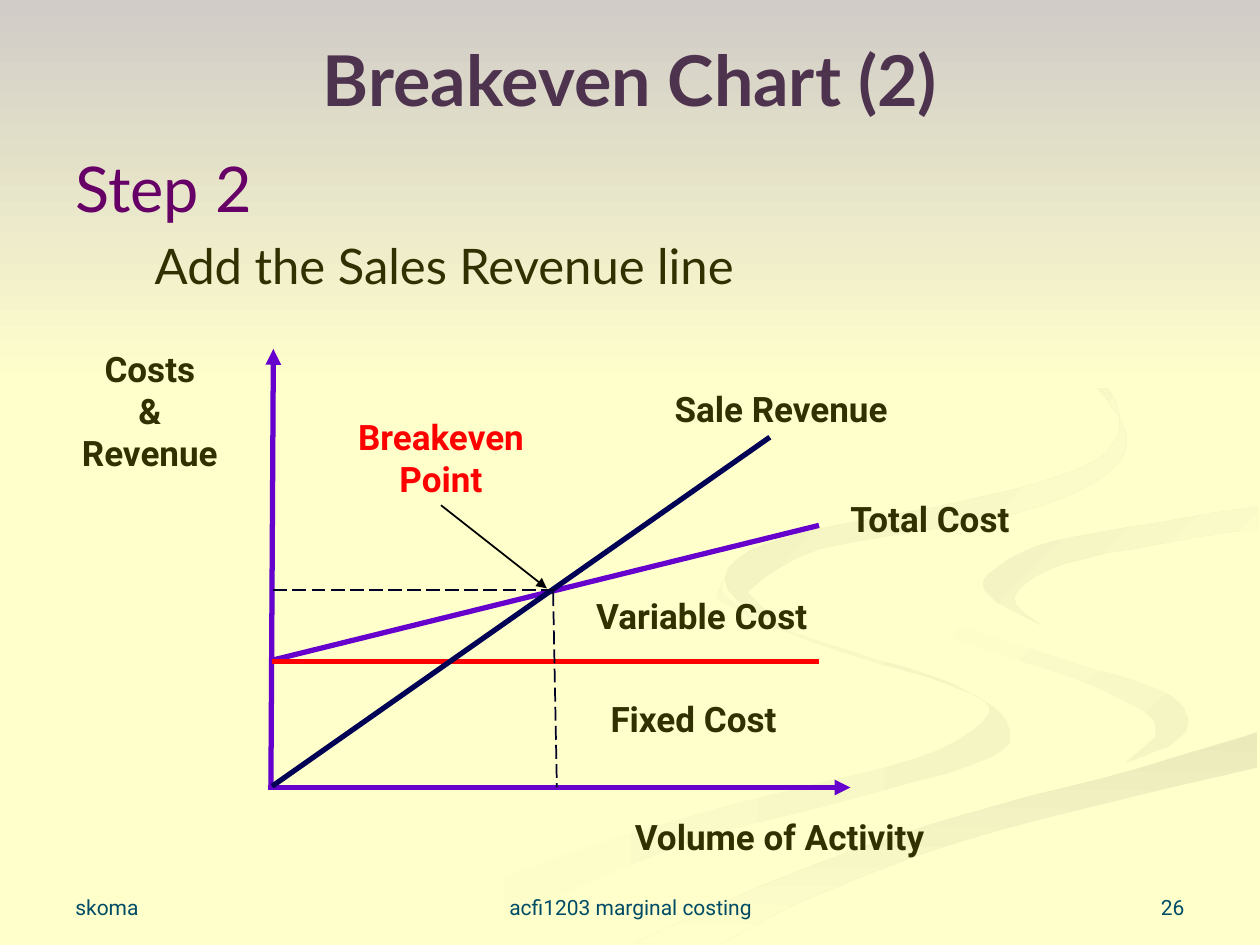
from lxml import etree
from pptx import Presentation
from pptx.dml.color import RGBColor
from pptx.enum.dml import MSO_LINE
from pptx.enum.shapes import MSO_CONNECTOR, MSO_SHAPE
from pptx.enum.text import MSO_ANCHOR, PP_ALIGN
from pptx.oxml.ns import qn
from pptx.util import Inches, Pt

LEFT, CENTER, RIGHT = PP_ALIGN.LEFT, PP_ALIGN.CENTER, PP_ALIGN.RIGHT
TOP, MIDDLE, BOTTOM = MSO_ANCHOR.TOP, MSO_ANCHOR.MIDDLE, MSO_ANCHOR.BOTTOM
DASH = MSO_LINE.LONG_DASH
COLORS = {
    "paper": "FFFFCC", "sky": "D1CCC7", "title": "4E334F", "step": "660066",
    "text": "303000", "red": "FF0000", "axis": "6600CC", "revenue": "000054",
    "guide": "000028", "black": "000000", "footer": "004C66",
    "pale": "F5F5C4", "shade": "EAEABB", "soft": "F1F1C1", "curl": "EDEDBE",
}
RGB = {name: RGBColor.from_string(value) for name, value in COLORS.items()}

# Background ribbons: start colour, end colour, clockwise angle and the
# two curved edges, in hundredths of an inch
RIBBONS = [
    ("paper", "pale", 0,
     [(575, 459), (576, 473), (614, 496), (682, 519), (757, 543), (799, 573),
      (786, 601), (676, 634), (532, 674), (361, 749)],
     [(300, 749), (417, 690), (579, 639), (727, 602), (785, 566), (752, 543),
      (654, 513), (576, 480), (570, 468)]),
    ("paper", "pale", 45,
     [(724, 464), (745, 490), (830, 519), (919, 547), (943, 570), (932, 589),
      (894, 605)],
     [(917, 585), (911, 567), (854, 539), (755, 505), (725, 474)]),
    ("shade", "paper", 90,
     [(571, 749), (649, 710), (785, 661), (998, 609)],
     [(998, 581), (903, 610), (764, 647), (630, 693), (503, 749)]),
    ("soft", "paper", 45,
     [(826, 496), (805, 474), (843, 448), (936, 429), (998, 420)],
     [(998, 402), (898, 418), (821, 434), (781, 460), (791, 478)]),
    ("curl", "paper", 45,
     [(622, 500), (578, 468), (589, 441), (649, 420), (763, 398), (861, 370),
      (889, 335), (862, 292), (762, 233)],
     [(843, 275), (894, 344), (867, 384), (786, 412), (649, 436), (593, 470)]),
]


def smooth(points, steps=5):
    """Return a Catmull-Rom curve through the points."""
    padded = [points[0], *points, points[-1]]
    curve = [points[0]]
    for a, b, c, d in zip(padded, padded[1:], padded[2:], padded[3:]):
        for step in range(1, steps + 1):
            t = step / steps
            curve.append(tuple(
                q + t / 2 * (r - p + t * (2 * p - 5 * q + 4 * r - s
                                          + t * (3 * (q - r) + s - p)))
                for p, q, r, s in zip(a, b, c, d)))
    return curve


def write(shape, lines, size, color, align=LEFT, anchor=TOP, font="Roboto", bold=False):
    """Fill a text shape with one paragraph per line."""
    frame = shape.text_frame
    frame.word_wrap = True
    frame.vertical_anchor = anchor
    for index, line in enumerate(lines):
        paragraph = frame.add_paragraph() if index else frame.paragraphs[0]
        paragraph.alignment = align
        run = paragraph.add_run()
        run.text = line
        run.font.name = font
        run.font.size = Pt(size)
        run.font.bold = bold
        run.font.color.rgb = RGB[color]


presentation = Presentation()
presentation.slide_width, presentation.slide_height = Inches(10), Inches(7.5)
slide = presentation.slides.add_slide(presentation.slide_layouts[5])
slide.background.fill.solid()
slide.background.fill.fore_color.rgb = RGB["paper"]
shapes = slide.shapes

# Background
backdrop = []
for start, end, angle, first_edge, second_edge in RIBBONS:
    outline = smooth(first_edge) + smooth(second_edge)
    builder = shapes.build_freeform(*outline[0], scale=Inches(0.01))
    builder.add_line_segments(outline[1:], close=True)
    backdrop.append((builder.convert_to_shape(), start, end, angle))
sky = shapes.add_shape(MSO_SHAPE.RECTANGLE, 0, 0, Inches(10), Inches(3.08))
backdrop.append((sky, "sky", "paper", 90))
for shape, start, end, angle in backdrop:
    shape.shadow.inherit = False
    shape.line.fill.background()
    shape.fill.gradient()
    shape.fill.gradient_angle = (360 - angle) % 360
    for position, (stop, color) in enumerate(zip(shape.fill.gradient_stops, (start, end))):
        stop.color.rgb = RGB[color]
        stop.position = position

# Title, brought in front of the background
title = shapes.title
title.left, title.top = Inches(0.5), Inches(0.2)
title.width, title.height = Inches(9), Inches(0.85)
write(title, ["Breakeven Chart (2)"], 40, "title", CENTER, MIDDLE, "Lato", True)
title.element.getparent().append(title.element)

# Step and its instruction
body = shapes.add_textbox(Inches(0.5), Inches(1.14), Inches(9.23), Inches(1.3))
write(body, ["Step 2", "Add the Sales Revenue line"], 36, "step", font="Lato")
instruction = body.text_frame.paragraphs[1]
instruction.space_before = Pt(5.6)
instruction._p.get_or_add_pPr().set("marL", str(Inches(0.63)))
instruction.runs[0].font.size = Pt(28)
instruction.runs[0].font.color.rgb = RGB["text"]

# Chart labels
LABELS = [
    (4.94, 6.42, 2.56, 0.43, ["Volume of Activity"], "text", LEFT),
    (0.41, 2.71, 1.56, 1.43, ["Costs", "&", "Revenue"], "text", CENTER),
    (4.58, 4.67, 1.98, 0.43, ["Variable Cost"], "text", CENTER),
    (4.69, 5.49, 1.63, 0.43, ["Fixed Cost"], "text", CENTER),
    (6.39, 3.9, 1.98, 0.43, ["Total Cost"], "text", CENTER),
    (5.21, 3.03, 1.98, 0.43, ["Sale Revenue"], "text", CENTER),
    (2.51, 3.25, 1.98, 0.76, ["Breakeven Point"], "red", CENTER),
]
for left, top, width, height, lines, color, align in LABELS:
    label = shapes.add_textbox(Inches(left), Inches(top), Inches(width), Inches(height))
    write(label, lines, 20, color, align, bold=True)
breakeven_label = label

# Axes, cost and revenue lines, guides and the pointer
LINES = [
    (2.13, 6.25, 6.75, 6.25, "axis", 3, None, True),
    (2.15, 6.25, 2.17, 2.77, "axis", 3, None, True),
    (2.16, 5.24, 6.5, 4.17, "axis", 3, None, False),
    (2.16, 5.25, 6.5, 5.25, "red", 3, None, False),
    (2.16, 6.24, 6.11, 3.47, "revenue", 3, None, False),
    (2.17, 4.68, 4.42, 4.68, "guide", 1, DASH, False),
    (4.39, 4.7, 4.42, 6.25, "guide", 1, DASH, False),
    (3.5, 4.01, 4.34, 4.67, "black", 1, None, True),
]
for x1, y1, x2, y2, color, width, dash, arrow in LINES:
    line = shapes.add_connector(
        MSO_CONNECTOR.STRAIGHT, Inches(x1), Inches(y1), Inches(x2), Inches(y2))
    line.line.color.rgb = RGB[color]
    line.line.width = Pt(width)
    if dash:
        line.line.dash_style = dash
    if arrow:
        etree.SubElement(line.line._get_or_add_ln(), qn("a:tailEnd"), type="triangle")
    etree.SubElement(line.element.spPr, qn("a:effectLst"))
pointer = line
pointer.begin_connect(breakeven_label, 2)

# Footer
FOOTERS = [
    (0.5, 2.33, "skoma", LEFT),
    (3.42, 3.17, "acfi1203 marginal costing", CENTER),
    (7.17, 2.33, "26", RIGHT),
]
for left, width, text, align in FOOTERS:
    footer = shapes.add_textbox(Inches(left), Inches(6.83), Inches(width), Inches(0.52))
    write(footer, [text], 12, "footer", align, BOTTOM)

presentation.save("out.pptx")
